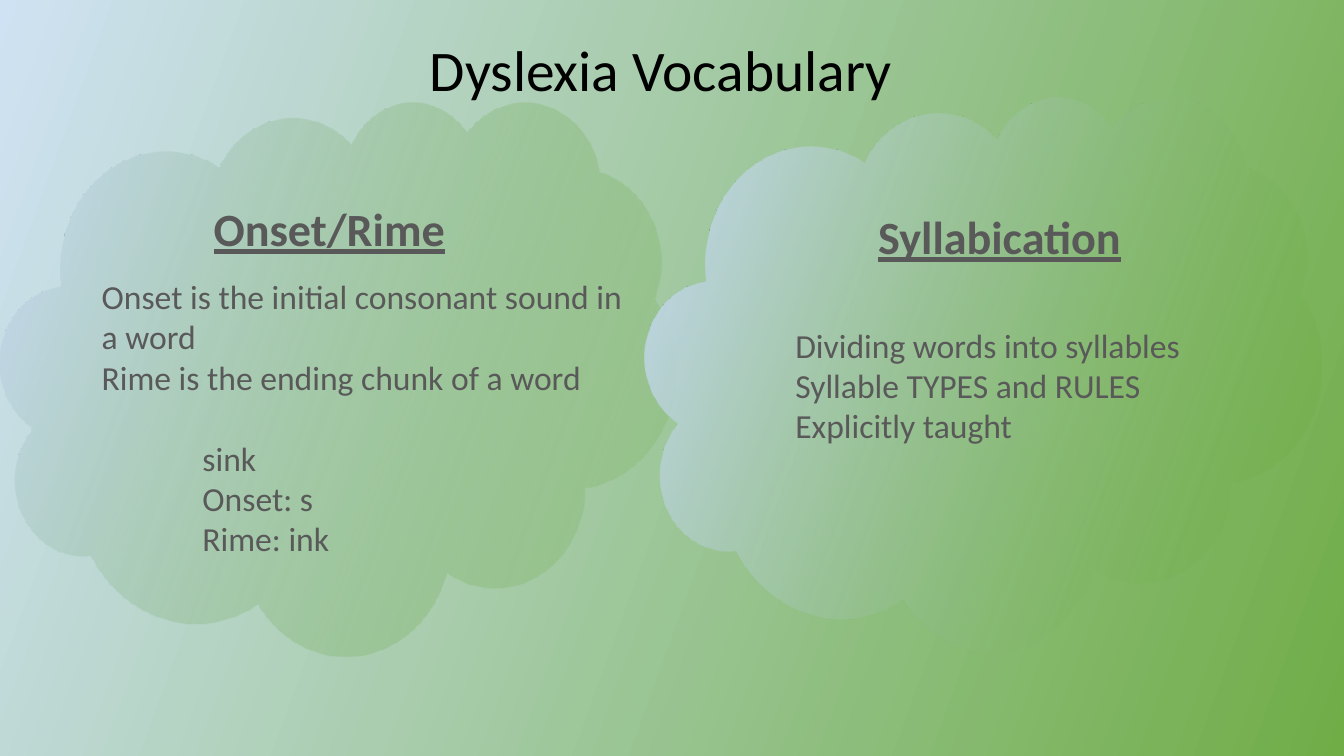
"""Build the Dyslexia Vocabulary slide with two gradient clouds."""
from lxml import etree
from pptx import Presentation
from pptx.dml.color import RGBColor
from pptx.enum.shapes import MSO_SHAPE
from pptx.enum.text import MSO_ANCHOR, MSO_AUTO_SIZE, PP_ALIGN
from pptx.oxml.ns import qn
from pptx.util import Inches, Pt

CLOUD = MSO_SHAPE.CLOUD
CENTER, LEFT = PP_ALIGN.CENTER, PP_ALIGN.LEFT
TOP, MIDDLE = MSO_ANCHOR.TOP, MSO_ANCHOR.MIDDLE
GROW = MSO_AUTO_SIZE.SHAPE_TO_FIT_TEXT

COLORS = {
    "title": "000000",
    "text": "595959",
    "green": "70AD47",
    "sky": "CFE2F3",
    "blue": "C9DAF8",
    "pale": "D9E4F8",
}
BACKGROUND_STOPS = [(0, "green", 20), (100, "sky", 100)]
CLOUD_STOPS = [(0, "green", 20), (16, "green", 20), (100, "blue", 100), (100, "pale", 100)]


def line(text, **text_format):
    """Describe one paragraph and its format."""
    return {"text": text, "size": 24, "color": "text", "align": LEFT, **text_format}


class SlideBuilder:
    """Hold the style and the current slide."""

    font_name = "Calibri"
    gradient_angle = 160
    inset = 0.1

    def __init__(self, slide):
        self.slide = slide

    def fill_gradient(self, fill, element, stops):
        """Give a fill the slide's gradient direction and the given stops."""
        fill.gradient()
        fill.gradient_angle = self.gradient_angle
        stop_list = next(element.iter(qn("a:gsLst")))
        for old_stop in list(stop_list):
            stop_list.remove(old_stop)
        for position, color, opacity in stops:
            stop = etree.SubElement(stop_list, qn("a:gs"), pos=str(position * 1000))
            value = etree.SubElement(stop, qn("a:srgbClr"), val=COLORS[color])
            if opacity < 100:
                etree.SubElement(value, qn("a:alpha"), val=str(opacity * 1000))

    def background(self, stops):
        """Fill the slide background."""
        self.fill_gradient(self.slide.background.fill, self.slide.element, stops)

    def cloud(self, left, top):
        """Add a cloud without outline."""
        shape = self.slide.shapes.add_shape(
            CLOUD, Inches(left), Inches(top), Inches(6.7), Inches(5.49))
        shape.shadow.inherit = False
        shape.line.fill.background()
        self.fill_gradient(shape.fill, shape.element, CLOUD_STOPS)

    def text(self, position, lines, anchor=TOP, extra_top=0, extra_bottom=0, grow=False):
        """Add a text box with formatted lines."""
        shape = self.slide.shapes.add_textbox(*map(Inches, position))
        frame = shape.text_frame
        frame.word_wrap = True
        frame.vertical_anchor = anchor
        frame.margin_left = frame.margin_right = Inches(self.inset)
        frame.margin_top = Inches(self.inset + extra_top)
        frame.margin_bottom = Inches(self.inset + extra_bottom)
        if grow:
            frame.auto_size = GROW
        for index, item in enumerate(lines):
            paragraph = frame.add_paragraph() if index else frame.paragraphs[0]
            self.format_paragraph(paragraph, **item)

    def format_paragraph(self, paragraph, text, size, color, align, heading=False,
                         indent=0, space_before=0, line_spacing=None):
        """Put text into a paragraph and format it."""
        if indent:
            properties = paragraph._p.get_or_add_pPr()
            properties.set("marL", str(Inches(indent)))
            properties.set("indent", "0")
        paragraph.alignment = align
        paragraph.space_before = Pt(space_before)
        paragraph.line_spacing = line_spacing
        run = paragraph.add_run()
        run.text = text
        run.font.name = self.font_name
        run.font.size = Pt(size)
        run.font.color.rgb = RGBColor.from_string(COLORS[color])
        run.font.bold = run.font.underline = heading


def main():
    """Build and save the presentation."""
    presentation = Presentation()
    presentation.slide_width = Inches(13.33)
    presentation.slide_height = Inches(7.5)
    builder = SlideBuilder(presentation.slides.add_slide(presentation.slide_layouts[6]))

    builder.background(BACKGROUND_STOPS)
    builder.cloud(0, 1)
    builder.text((2.12, 0.32, 8.87, 0.77), [
        line("Dyslexia Vocabulary", size=41, color="title", align=CENTER, line_spacing=0.9)])
    builder.cloud(6.4, 0.95)

    builder.text((2.02, 1.89, 2.91, 0.77), [line("Onset/Rime", size=33, heading=True)])
    builder.text((7.6, 1.97, 4.63, 0.76), [
        line("Syllabication", size=33, heading=True, align=CENTER)], grow=True)

    builder.text((0.91, 3.08, 5.48, 2.52), [
        line("Onset is the initial consonant sound in a word"),
        line("Rime is the ending chunk of a word"),
        line("sink", indent=1, space_before=29),
        line("Onset: s", indent=1),
        line("Rime: ink", indent=1),
    ], anchor=MIDDLE, extra_bottom=0.4)
    builder.text((7.79, 2.72, 4.63, 2.87), [
        line("Dividing words into syllables"),
        line("Syllable TYPES and RULES"),
        line("Explicitly taught"),
    ], extra_top=0.4)

    presentation.save("out.pptx")


if __name__ == "__main__":
    main()
